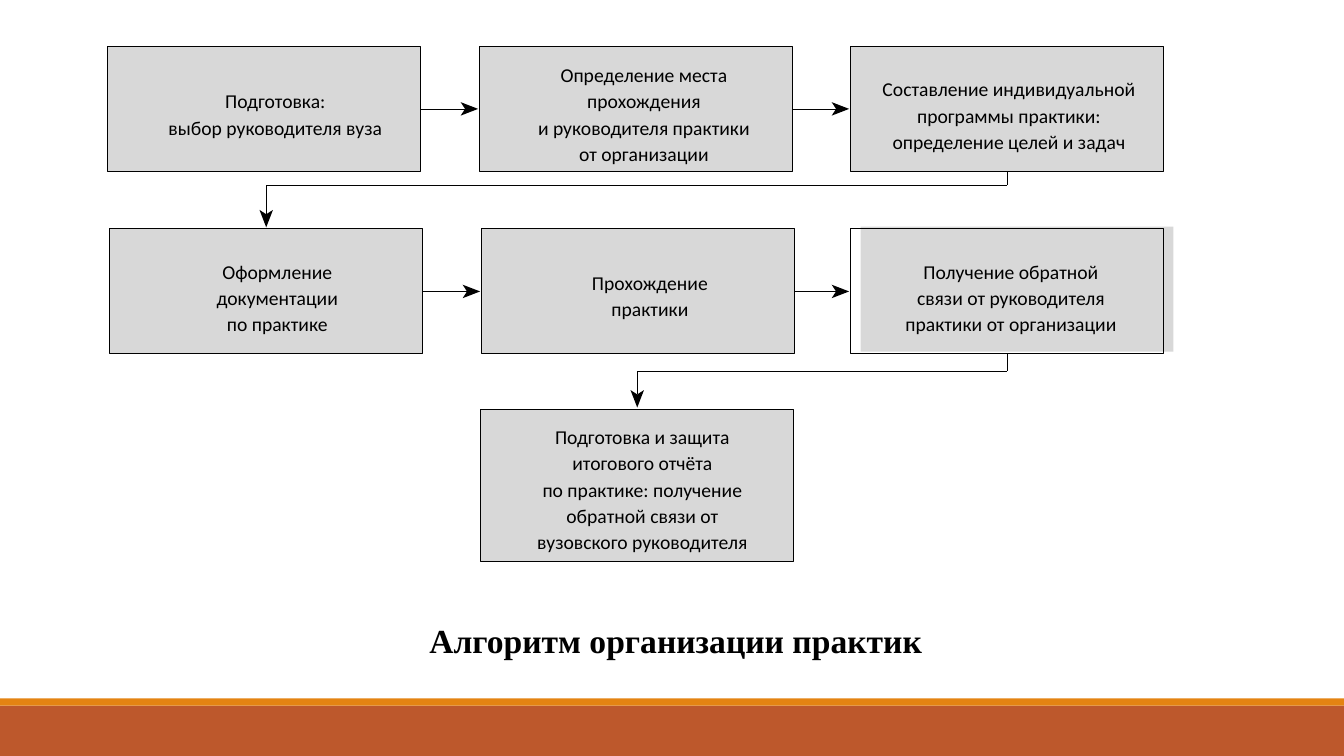
from dataclasses import dataclass

from lxml import etree
from pptx import Presentation
from pptx.dml.color import RGBColor
from pptx.enum import shapes, text
from pptx.oxml.ns import qn
from pptx.util import Cm, Pt


@dataclass(frozen=True)
class Theme:
    ink: str = "000000"
    arrow: str = "010101"
    panel: str = "D8D8D8"
    footer: str = "BD582C"
    stripe: str = "E48312"
    body_font: str = "Calibri"
    title_font: str = "Times New Roman"
    body_size: float = 14
    title_size: float = 24
    leading: float = 18.8
    border: float = 0.75
    shaft: float = 0.5


THEME = Theme()

# All lengths are in centimetres.
SLIDE = (33.87, 19.05)
TITLE = "Алгоритм организации практик"
TITLE_FRAME = (10.57, 15.49, 13.06, 1.27)
BANDS = [((0, 17.78, 33.87, 1.27), THEME.footer), ((0, 17.6, 33.87, 0.18), THEME.stripe)]

STEP_WIDTH = 7.88
# Each row: top, height, and steps as (left, text inset from top, text shift right, lines).
ROWS = [
    (1.17, 3.15, [
        (2.72, 1.01, 0.28, ["Подготовка:", "выбор руководителя вуза"]),
        (12.09, 0.35, 0.2, ["Определение места", "прохождения",
                            "и руководителя практики", "от организации"]),
        (21.44, 0.71, 0.05, ["Составление индивидуальной", "программы практики:",
                             "определение целей и задач"]),
    ]),
    (5.77, 3.15, [
        (2.77, 0.7, 0.28, ["Оформление", "документации", "по практике"]),
        (12.14, 0.98, 0.3, ["Прохождение", "практики"]),
        (21.44, 0.7, 0.1, ["Получение обратной", "связи от руководителя",
                           "практики от организации"]),
    ]),
    (10.31, 3.83, [
        (12.12, 0.33, 0.13, ["Подготовка и защита", "итогового отчёта",
                             "по практике: получение", "обратной связи от",
                             "вузовского руководителя"]),
    ]),
]
OFFSET_FILL_STEP = (1, 2)
FILL_OFFSET = (0.25, -0.06)
LANES = [4.67, 9.35]

TIP_GAP = 0.04
HEAD_LENGTH, HEAD_NOTCH, HEAD_HALF = 0.44, 0.33, 0.17


def color(value):
    return RGBColor.from_string(value)


def paint(shape, fill=None, line=None):
    shape.shadow.inherit = False
    if fill:
        shape.fill.solid()
        shape.fill.fore_color.rgb = color(fill)
    else:
        shape.fill.background()
    if line:
        shape.line.color.rgb = color(line)
        shape.line.width = Pt(THEME.border)
    else:
        shape.line.fill.background()


def add_box(page, frame, **format):
    box = page.shapes.add_shape(shapes.MSO_SHAPE.RECTANGLE, *map(Cm, frame))
    paint(box, **format)
    return box


def write(box, lines, font, size, bold=False, align=text.PP_ALIGN.LEFT, leading=None):
    frame = box.text_frame
    frame.vertical_anchor = text.MSO_ANCHOR.TOP
    for index, line in enumerate(lines):
        para = frame.add_paragraph() if index else frame.paragraphs[0]
        para.alignment = align
        if leading:
            para.line_spacing = Pt(leading)
        span = para.add_run()
        span.text = line
        span.font.name, span.font.size, span.font.bold = font, Pt(size), bold
        span.font.color.rgb = color(THEME.ink)


def add_step(page, left, top, height, inset, shift, lines, offset_fill):
    if offset_fill:
        across, down = FILL_OFFSET
        add_box(page, (left + across, top + down, STEP_WIDTH, height), fill=THEME.panel)
    box = add_box(page, (left, top, STEP_WIDTH, height),
                  fill=None if offset_fill else THEME.panel, line=THEME.ink)
    frame = box.text_frame
    frame.word_wrap = True
    frame.margin_left, frame.margin_top = Cm(2 * shift), Cm(inset)
    frame.margin_right = frame.margin_bottom = 0
    write(box, lines, THEME.body_font, THEME.body_size,
          align=text.PP_ALIGN.CENTER, leading=THEME.leading)


def add_arrow(page, points):
    """Draw straight segments through the points, with a notched head at the last one."""
    (before_x, before_y), (tip_x, tip_y) = points[-2:]
    length = abs(tip_x - before_x) + abs(tip_y - before_y)
    along_x, along_y = (tip_x - before_x) / length, (tip_y - before_y) / length

    def from_tip(back, side):
        return (tip_x - back * along_x - side * along_y,
                tip_y - back * along_y + side * along_x)

    notch = from_tip(HEAD_NOTCH, 0)
    stops = points[:-1] + [notch]
    for start, end in zip(stops, stops[1:]):
        segment = page.shapes.add_connector(
            shapes.MSO_CONNECTOR.STRAIGHT, *map(Cm, start + end))
        segment.line.color.rgb = color(THEME.arrow)
        segment.line.width = Pt(THEME.shaft)
        etree.SubElement(segment._element.spPr, qn("a:effectLst"))

    outline = [from_tip(HEAD_LENGTH, HEAD_HALF), notch, from_tip(HEAD_LENGTH, -HEAD_HALF)]
    builder = page.shapes.build_freeform(Cm(tip_x), Cm(tip_y))
    builder.add_line_segments([(Cm(x), Cm(y)) for x, y in outline], close=True)
    paint(builder.convert_to_shape(), fill=THEME.arrow)


def add_row_arrows(page, top, height, steps):
    middle = top + height / 2
    for current, following in zip(steps, steps[1:]):
        add_arrow(page, [(current[0] + STEP_WIDTH, middle), (following[0] - TIP_GAP, middle)])


def add_turn(page, row, next_row, lane):
    """Lead from the last step of a row to the first step of the next."""
    top, height, steps = row
    start_x = steps[-1][0] + STEP_WIDTH / 2
    end_x = next_row[2][0][0] + STEP_WIDTH / 2
    add_arrow(page, [(start_x, top + height), (start_x, lane),
                     (end_x, lane), (end_x, next_row[0] - TIP_GAP)])


def main():
    deck = Presentation()
    deck.slide_width, deck.slide_height = map(Cm, SLIDE)
    page = deck.slides.add_slide(deck.slide_layouts[6])
    for frame, fill in BANDS:
        add_box(page, frame, fill=fill)
    for row_index, (top, height, steps) in enumerate(ROWS):
        for index, (left, inset, shift, lines) in enumerate(steps):
            add_step(page, left, top, height, inset, shift, lines,
                     (row_index, index) == OFFSET_FILL_STEP)
        add_row_arrows(page, top, height, steps)
    for row, next_row, lane in zip(ROWS, ROWS[1:], LANES):
        add_turn(page, row, next_row, lane)
    title = page.shapes.add_textbox(*map(Cm, TITLE_FRAME))
    title.text_frame.word_wrap = False
    write(title, [TITLE], THEME.title_font, THEME.title_size, bold=True)
    deck.save("out.pptx")


if __name__ == "__main__":
    main()
